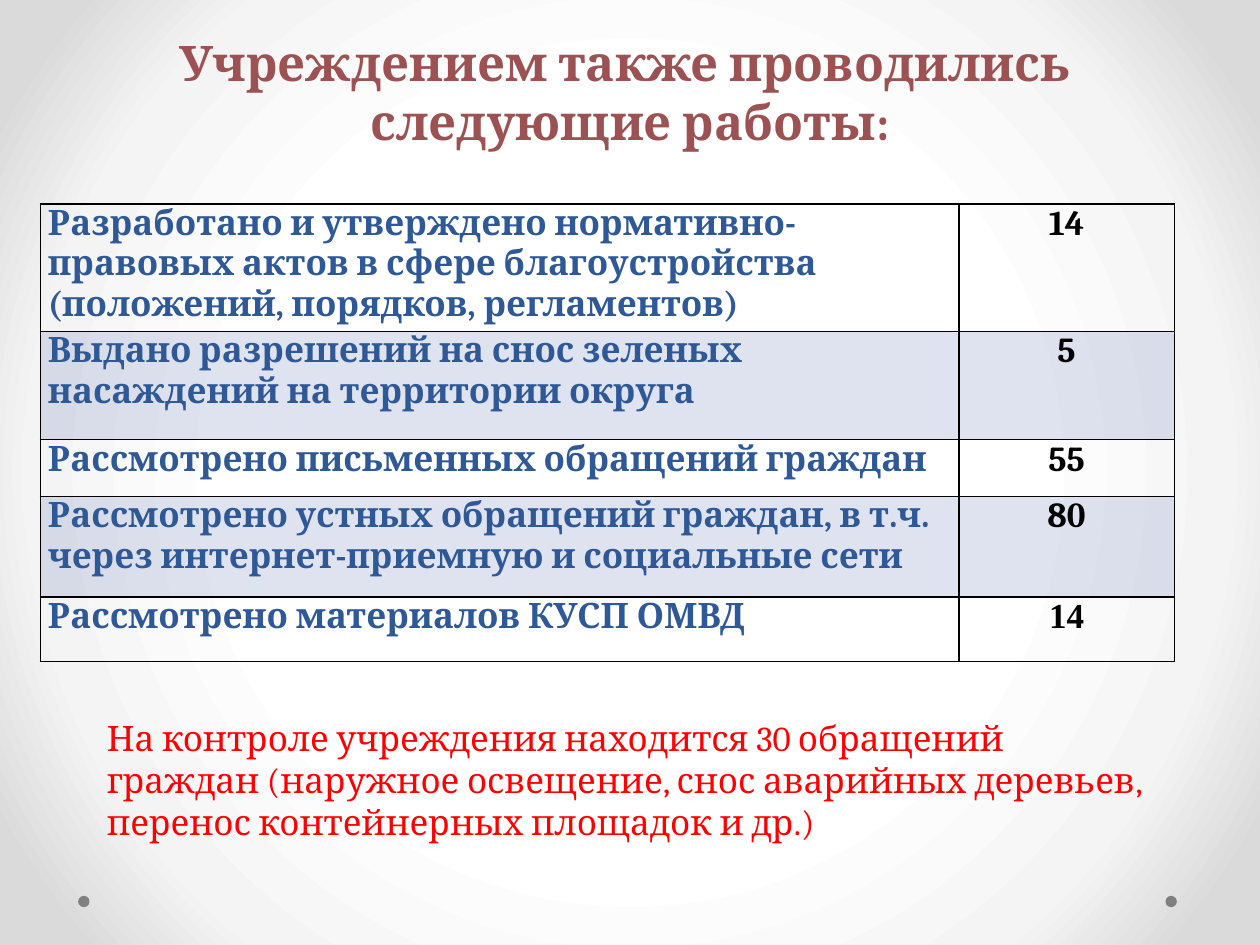
from dataclasses import dataclass

from lxml import etree
from pptx import Presentation, util as u
from pptx.dml.color import RGBColor
from pptx.enum import shapes, text
from pptx.oxml import parse_xml
from pptx.oxml.ns import qn

WIDTH, HEIGHT = u.Inches(10), u.Inches(7.5)
SERIF = "Cambria"
TITLE_RED = RGBColor(0x9C, 0x52, 0x52)
LABEL_BLUE = RGBColor(0x2F, 0x58, 0x97)
BAND_BLUE = RGBColor(0x60, 0x76, 0xB4)
NOTE_RED = RGBColor(0xFF, 0, 0)
DOT_GREY = RGBColor(0x80, 0x80, 0x80)
BLACK = RGBColor(0, 0, 0)
BACKDROP = ((50, "FFFFFF"), (76, "F4F4F4"), (92, "DADADA"))
A_NS = "http://schemas.openxmlformats.org/drawingml/2006/main"


@dataclass
class Area:
    left: float
    top: float
    width: float
    height: float

    def emu(self) -> tuple[int, int, int, int]:
        return (int(WIDTH * self.left), int(HEIGHT * self.top),
                int(WIDTH * self.width), int(HEIGHT * self.height))


@dataclass
class Work:
    label: str
    count: str
    height: float
    count_font: str = SERIF


WORKS = [
    Work("Разработано и утверждено нормативно-правовых актов в сфере благоустройства "
         "(положений, порядков, регламентов)", "14", 1.01),
    Work("Выдано разрешений на снос зеленых насаждений на территории округа", "5", 0.86),
    Work("Рассмотрено письменных обращений граждан", "55", 0.45),
    Work("Рассмотрено устных обращений граждан, в т.ч. через интернет-приемную "
         "и социальные сети", "80", 0.8),
    Work("Рассмотрено материалов КУСП ОМВД", "14", 0.51, "Times New Roman"),
]
TITLE_AREA = Area(0.02, 0.028, 0.96, 0.139)
TABLE_AREA = Area(0.032, 0.216, 0.9, 0.483)
NOTE_AREA = Area(0.075, 0.752, 0.857, 0.148)
DOT_AREAS = [Area(left, 0.948, 0.009, 0.012) for left in (0.925, 0.062)]
COLUMN_SHARES = (0.81, 0.19)


def style(para, size: int, color: RGBColor, bold: bool = False,
          font: str = SERIF, align=text.PP_ALIGN.LEFT) -> None:
    para.alignment = align
    for span in para.runs:
        span.font.name, span.font.size, span.font.bold = font, u.Pt(size), bold
        span.font.color.rgb = color


def paint_background(page) -> None:
    page.background.fill.solid()
    solid = next(page.element.iter(qn("a:solidFill")))
    stops = "".join(f'<a:gs pos="{pos * 1000}"><a:srgbClr val="{color}"/></a:gs>'
                    for pos, color in BACKDROP)
    gradient = parse_xml(
        f'<a:gradFill xmlns:a="{A_NS}" rotWithShape="1"><a:gsLst>{stops}</a:gsLst>'
        '<a:path path="circle"><a:fillToRect l="50000" t="50000" r="50000" b="50000"/>'
        '</a:path></a:gradFill>')
    solid.getparent().replace(solid, gradient)


def add_dot(page, area: Area) -> None:
    dot = page.shapes.add_shape(shapes.MSO_SHAPE.OVAL, *area.emu())
    dot.shadow.inherit = False
    dot.fill.solid()
    dot.fill.fore_color.rgb = DOT_GREY
    dot.line.fill.background()


def fill_title(page) -> None:
    title = page.shapes.title
    title.left, title.top, title.width, title.height = TITLE_AREA.emu()
    frame = title.text_frame
    frame.text = "Учреждением также проводились \nследующие работы:"
    frame.vertical_anchor = text.MSO_ANCHOR.TOP
    frame.auto_size = text.MSO_AUTO_SIZE.SHAPE_TO_FIT_TEXT
    for para in frame.paragraphs:
        style(para, 28, TITLE_RED, True, align=text.PP_ALIGN.CENTER)


def format_cell(cell, banded: bool) -> None:
    cell.margin_left = cell.margin_right = u.Inches(0.06)
    cell.margin_top = cell.margin_bottom = 0
    if banded:
        cell.fill.solid()
        cell.fill.fore_color.rgb = BAND_BLUE
        color = next(cell.fill._xPr.iter(qn("a:srgbClr")))
        etree.SubElement(color, qn("a:alpha"), val="20000")
    else:
        cell.fill.background()
    properties = cell._tc.get_or_add_tcPr()
    for index, side in enumerate(("lnL", "lnR", "lnT", "lnB")):
        properties.insert(index, parse_xml(
            f'<a:{side} xmlns:a="{A_NS}" w="{u.Pt(1)}"><a:solidFill>'
            f'<a:srgbClr val="{BLACK}"/></a:solidFill></a:{side}>'))


def add_works_table(page, works: list[Work]) -> None:
    area = TABLE_AREA.emu()
    table = page.shapes.add_table(len(works), len(COLUMN_SHARES), *area).table
    table.first_row = table.horz_banding = False
    for column, share in zip(table.columns, COLUMN_SHARES):
        column.width = int(area[2] * share)
    for index, work in enumerate(works):
        table.rows[index].height = u.Inches(work.height)
        label, count = table.rows[index].cells
        label.text, count.text = work.label, work.count
        style(label.text_frame.paragraphs[0], 20, LABEL_BLUE, True)
        style(count.text_frame.paragraphs[0], 20, BLACK, True, work.count_font,
              text.PP_ALIGN.CENTER)
        for cell in (label, count):
            format_cell(cell, index % 2 == 1)


def add_note(page) -> None:
    box = page.shapes.add_textbox(*NOTE_AREA.emu())
    frame = box.text_frame
    frame.word_wrap = True
    frame.auto_size = text.MSO_AUTO_SIZE.SHAPE_TO_FIT_TEXT
    frame.text = ("На контроле учреждения находится 30 обращений граждан (наружное освещение, "
                  "снос аварийных деревьев, перенос контейнерных площадок и др.)")
    style(frame.paragraphs[0], 20, NOTE_RED)


def main() -> None:
    deck = Presentation()
    deck.slide_width, deck.slide_height = WIDTH, HEIGHT
    page = deck.slides.add_slide(deck.slide_layouts.get_by_name("Title Only"))
    paint_background(page)
    for area in DOT_AREAS:
        add_dot(page, area)
    fill_title(page)
    add_works_table(page, WORKS)
    add_note(page)
    deck.save("out.pptx")


if __name__ == "__main__":
    main()
